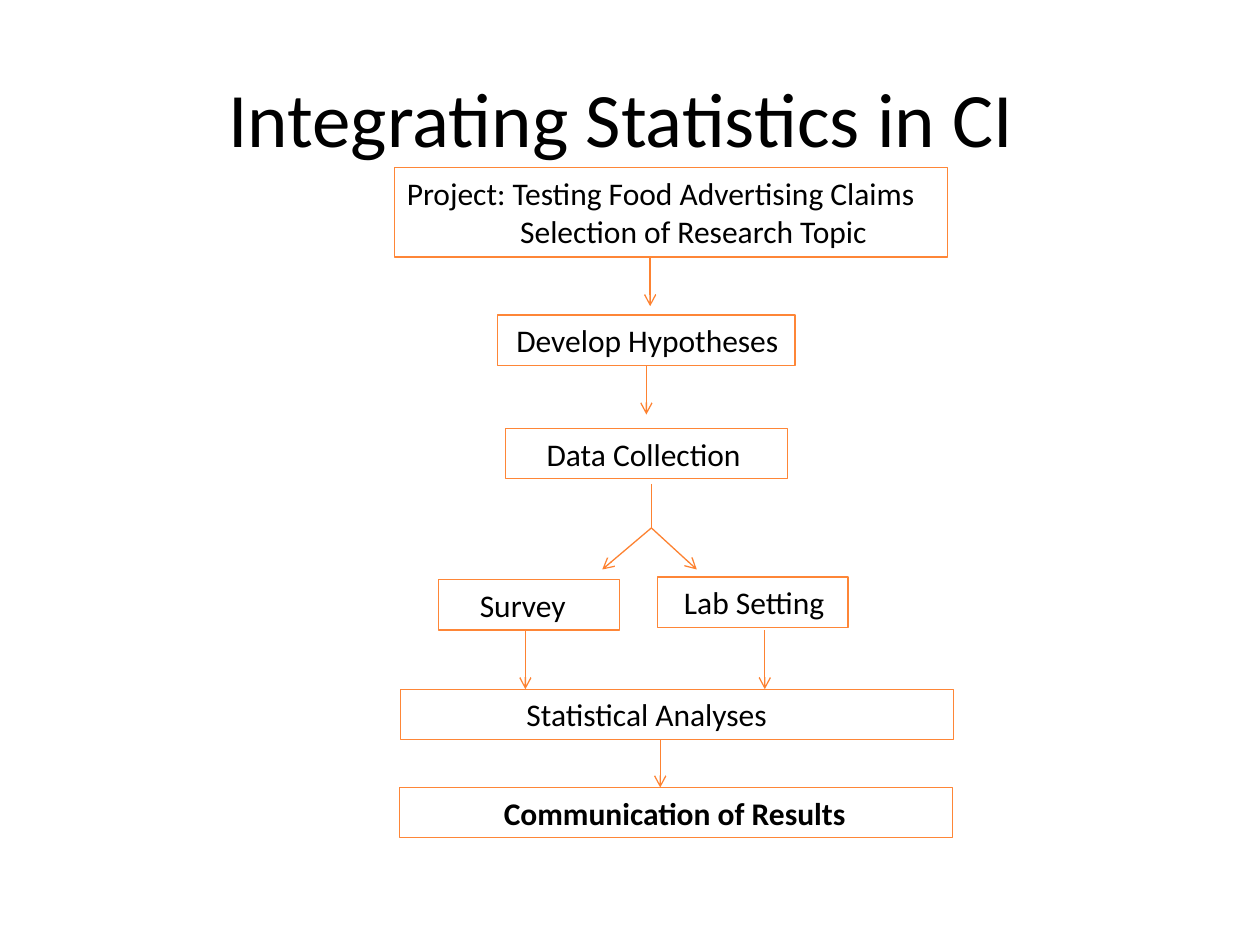
from dataclasses import dataclass

from lxml.etree import SubElement
from pptx import Presentation
from pptx.dml.color import RGBColor
from pptx.enum.shapes import MSO_CONNECTOR as Connector, MSO_SHAPE as Shape
from pptx.enum.text import MSO_ANCHOR as Anchor, PP_ALIGN as Align
from pptx.oxml.ns import qn
from pptx.slide import Slide
from pptx.text.text import _Paragraph as Paragraph
from pptx.util import Inches, Pt


@dataclass(frozen=True)
class Theme:
    font: str = "Calibri"
    text: RGBColor = RGBColor(0x00, 0x00, 0x00)
    border: RGBColor = RGBColor(0xFE, 0x86, 0x37)
    arrow: RGBColor = RGBColor(0xFD, 0x82, 0x31)
    title_size: Pt = Pt(44)
    body_size: Pt = Pt(18)
    line_width: Pt = Pt(0.75)


@dataclass(frozen=True)
class TextLine:
    text: str
    indent: float = 0
    bold: bool = False


@dataclass(frozen=True)
class Step:
    left: float
    top: float
    width: float
    lines: tuple[TextLine, ...]
    height: float = 0.4


@dataclass(frozen=True)
class Link:
    start: tuple[float, float]
    end: tuple[float, float]
    has_head: bool = True


THEME = Theme()
WIDE = 4.39
FORK = (5.17, 4.19)

STEPS = (
    Step(3.13, 1.33, WIDE, (TextLine("Project: Testing Food Advertising Claims"),
                            TextLine("Selection of Research Topic", 0.9)), 0.71),
    Step(3.95, 2.5, 2.36, (TextLine("Develop Hypotheses", 0.05),)),
    Step(4.01, 3.4, 2.24, (TextLine("Data Collection", 0.23),)),
    Step(3.48, 4.6, 1.44, (TextLine("Survey", 0.23),)),
    Step(5.22, 4.58, 1.51, (TextLine("Lab Setting", 0.11),)),
    Step(3.18, 5.47, WIDE, (TextLine("Statistical Analyses", 0.9),)),
    Step(3.17, 6.25, WIDE, (TextLine("Communication of Results", 0.73, True),)),
)

LINKS = (
    Link((5.16, 2.05), (5.16, 2.43)),
    Link((5.13, 2.9), (5.13, 3.29)),
    Link((5.17, 3.84), FORK, has_head=False),
    Link(FORK, (4.78, 4.52)),
    Link(FORK, (5.53, 4.52)),
    Link((4.17, 5), (4.17, 5.47)),
    Link((6.07, 5), (6.07, 5.47)),
    Link((5.24, 5.87), (5.24, 6.25)),
)


def format_runs(paragraph: Paragraph, size: Pt, bold: bool = False) -> None:
    for run in paragraph.runs:
        run.font.name = THEME.font
        run.font.size = size
        run.font.bold = bold
        run.font.color.rgb = THEME.text


def add_title(slide: Slide, text: str) -> None:
    box = slide.shapes.add_textbox(Inches(0.5), Inches(0.3), Inches(9), Inches(1.25))
    frame = box.text_frame
    frame.word_wrap = True
    frame.vertical_anchor = Anchor.MIDDLE
    frame.text = text
    paragraph = frame.paragraphs[0]
    paragraph.alignment = Align.CENTER
    format_runs(paragraph, THEME.title_size)


def add_step(slide: Slide, step: Step) -> None:
    box = slide.shapes.add_shape(Shape.RECTANGLE, Inches(step.left), Inches(step.top),
                                 Inches(step.width), Inches(step.height))
    box.shadow.inherit = False
    box.fill.background()
    box.line.color.rgb = THEME.border
    box.line.width = THEME.line_width
    frame = box.text_frame
    frame.word_wrap = True
    frame.vertical_anchor = Anchor.TOP
    frame.text = "\n".join(line.text for line in step.lines)
    for paragraph, line in zip(frame.paragraphs, step.lines):
        paragraph.alignment = Align.LEFT
        paragraph._p.get_or_add_pPr().set("marL", str(Inches(line.indent)))
        format_runs(paragraph, THEME.body_size, line.bold)


def add_link(slide: Slide, link: Link) -> None:
    points = [Inches(value) for value in (*link.start, *link.end)]
    connector = slide.shapes.add_connector(Connector.STRAIGHT, *points)
    connector.line.color.rgb = THEME.arrow
    connector.line.width = THEME.line_width
    if link.has_head:
        SubElement(connector.line._get_or_add_ln(), qn("a:tailEnd"), type="arrow")
    SubElement(connector._element.spPr, qn("a:effectLst"))


def main() -> None:
    presentation = Presentation()
    presentation.slide_width = Inches(10)
    presentation.slide_height = Inches(7.5)
    slide = presentation.slides.add_slide(presentation.slide_layouts[6])
    for link in LINKS:
        add_link(slide, link)
    add_title(slide, "Integrating Statistics in CI ")
    for step in STEPS:
        add_step(slide, step)
    presentation.save("out.pptx")


if __name__ == "__main__":
    main()
